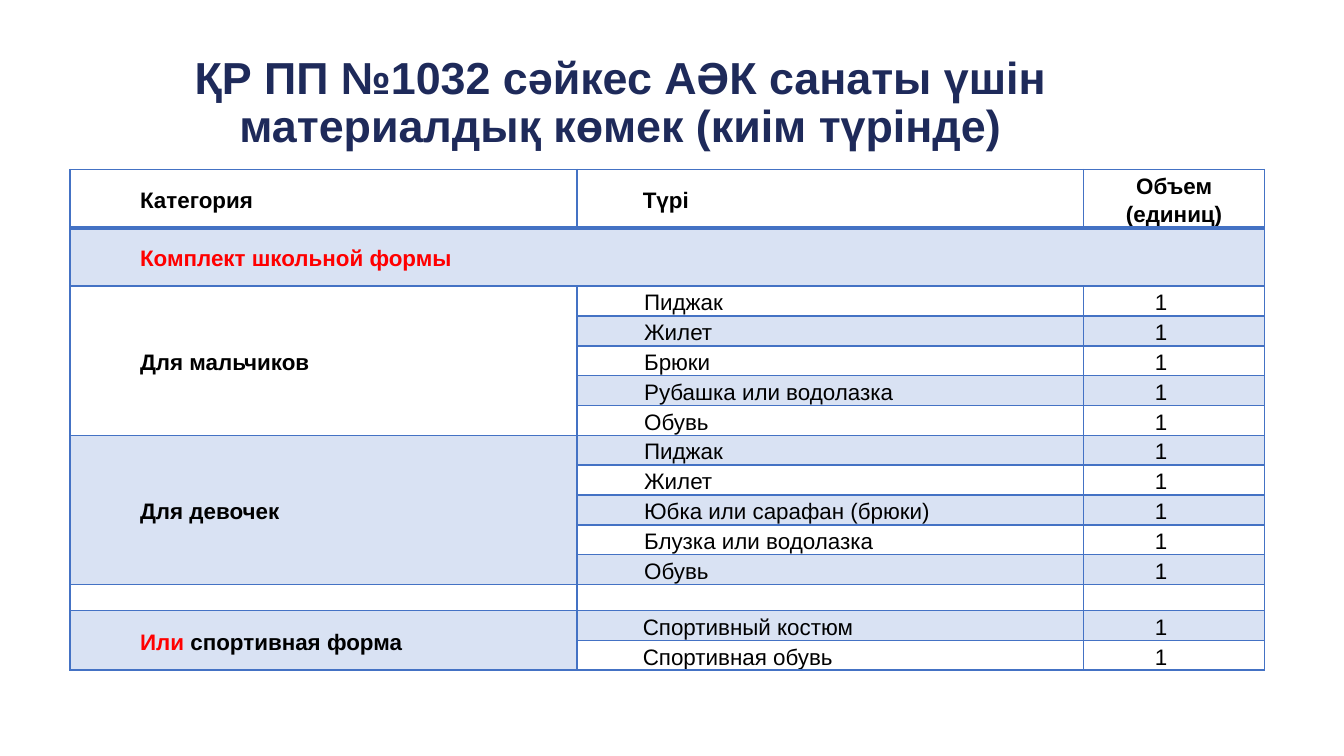
from lxml.etree import SubElement
from pptx import Presentation
from pptx.dml.color import RGBColor as RGB
from pptx.enum.text import MSO_ANCHOR as Anchor, MSO_AUTO_SIZE as Fit, PP_ALIGN as Align
from pptx.oxml.ns import qn
from pptx.util import Pt

NAVY = RGB(0x1E, 0x2A, 0x5A)
BLUE = RGB(0x44, 0x72, 0xC4)
RED = RGB(0xFF, 0x00, 0x00)
BLACK = RGB(0x00, 0x00, 0x00)

TITLE = "ҚР ПП №1032 сәйкес АӘК санаты үшін материалдық көмек (киім түрінде)"
WIDTHS = [271.5, 271.5, 97]
HEIGHTS = [31.2] * 2 + [16] * 10 + [14] + [16] * 2
NUDGE = 0.72

# first row, label runs, left margin of the items, items
GROUPS = [
    (2, [("Для мальчиков", BLACK)], NUDGE,
     ["Пиджак", "Жилет", "Брюки", "Рубашка или водолазка", "Обувь"]),
    (7, [("Для девочек", BLACK)], NUDGE,
     ["Пиджак", "Жилет", "Юбка или сарафан (брюки)", "Блузка или водолазка", "Обувь"]),
    (13, [("Или ", RED), ("спортивная форма", BLACK)], 0,
     ["Спортивный костюм", "Спортивная обувь"]),
]


class Page:
    font = "Arial"
    size = Pt(12)
    indent = Pt(35.3)

    def __init__(self, deck):
        self.slide = deck.slides.add_slide(deck.slide_layouts[5])

    def title(self, text, left, top, width, height):
        shape = self.slide.shapes.title
        shape.left, shape.top = Pt(left), Pt(top)
        shape.width, shape.height = Pt(width), Pt(height)
        frame = shape.text_frame
        frame.text = text
        frame.word_wrap = True
        frame.auto_size = Fit.NONE
        frame.vertical_anchor = Anchor.MIDDLE
        para = frame.paragraphs[0]
        para.alignment = Align.CENTER
        para.line_spacing = 0.9
        self.style(para.runs[0].font, NAVY, True, Pt(24))

    def style(self, font, color, bold, size):
        font.name, font.size, font.bold = self.font, size, bold
        font.color.rgb = color

    def table(self, left, top, widths, heights):
        frame = self.slide.shapes.add_table(
            len(heights), len(widths), Pt(left), Pt(top), Pt(sum(widths)), Pt(sum(heights)))
        grid = frame.table
        grid.first_row = grid.horz_banding = False
        for col, width in zip(grid.columns, widths):
            col.width = Pt(width)
        for row, height in zip(grid.rows, heights):
            row.height = Pt(height)
        for r in range(len(heights)):
            for c in range(len(widths)):
                self.blank(grid.cell(r, c), r, c)
        return grid

    def blank(self, cell, row, col):
        """Give a cell its margins, borders and band."""
        cell.margin_top = cell.margin_bottom = 0
        cell.margin_left = cell.margin_right = Pt(0 if col == 1 else 2.16)
        cell.vertical_anchor = Anchor.MIDDLE
        cell.text_frame.paragraphs[0].font.size = Pt(10)
        thick = {"lnT": row == 1, "lnB": row == 0}
        for side in ("lnL", "lnR", "lnT", "lnB"):
            self.border(cell, side, 2 if thick.get(side) else 1)
        if row % 2:
            cell.fill.solid()
            cell.fill.fore_color.rgb = BLUE
            tint = cell._tc.tcPr.find(qn("a:solidFill")).find(qn("a:srgbClr"))
            SubElement(tint, qn("a:alpha"), val="20000")
        else:
            cell.fill.background()

    def border(self, cell, side, width):
        line = SubElement(cell._tc.get_or_add_tcPr(), qn(f"a:{side}"), w=str(Pt(width)))
        fill = SubElement(line, qn("a:solidFill"))
        SubElement(fill, qn("a:srgbClr"), val=str(BLUE))

    def label(self, cell, parts, bold=True, margin=0, after=0, align=Align.JUSTIFY):
        para = cell.text_frame.paragraphs[0]
        para.alignment = align
        para.line_spacing = 1.15
        para.space_after = Pt(after)
        if align == Align.JUSTIFY:
            props = para._p.get_or_add_pPr()
            props.set("marL", str(Pt(margin)))
            props.set("indent", str(self.indent))
        for text, color in parts:
            run = para.add_run()
            run.text = text
            self.style(run.font, color, bold, self.size)

    def item(self, cell, text, margin):
        self.label(cell, [(text, BLACK)], False, margin, 1 if margin else 0)


def main():
    deck = Presentation()
    deck.slide_width, deck.slide_height = Pt(720), Pt(405)
    page = Page(deck)
    page.title(TITLE, 25.2, 36.7, 614.2, 38.2)

    grid = page.table(37.6, 90.9, WIDTHS, HEIGHTS)
    page.label(grid.cell(0, 0), [("Категория", BLACK)])
    page.label(grid.cell(0, 1), [("Түрі", BLACK)])
    page.label(grid.cell(0, 2), [("Объем (единиц)", BLACK)], align=Align.CENTER)
    grid.cell(1, 0).merge(grid.cell(1, 2))
    page.label(grid.cell(1, 0), [("Комплект школьной формы", RED)])

    for first, parts, margin, items in GROUPS:
        grid.cell(first, 0).merge(grid.cell(first + len(items) - 1, 0))
        page.label(grid.cell(first, 0), parts)
        for row, name in enumerate(items, first):
            page.item(grid.cell(row, 1), name, margin)
            page.item(grid.cell(row, 2), "1", NUDGE)

    deck.save("out.pptx")


if __name__ == "__main__":
    main()
